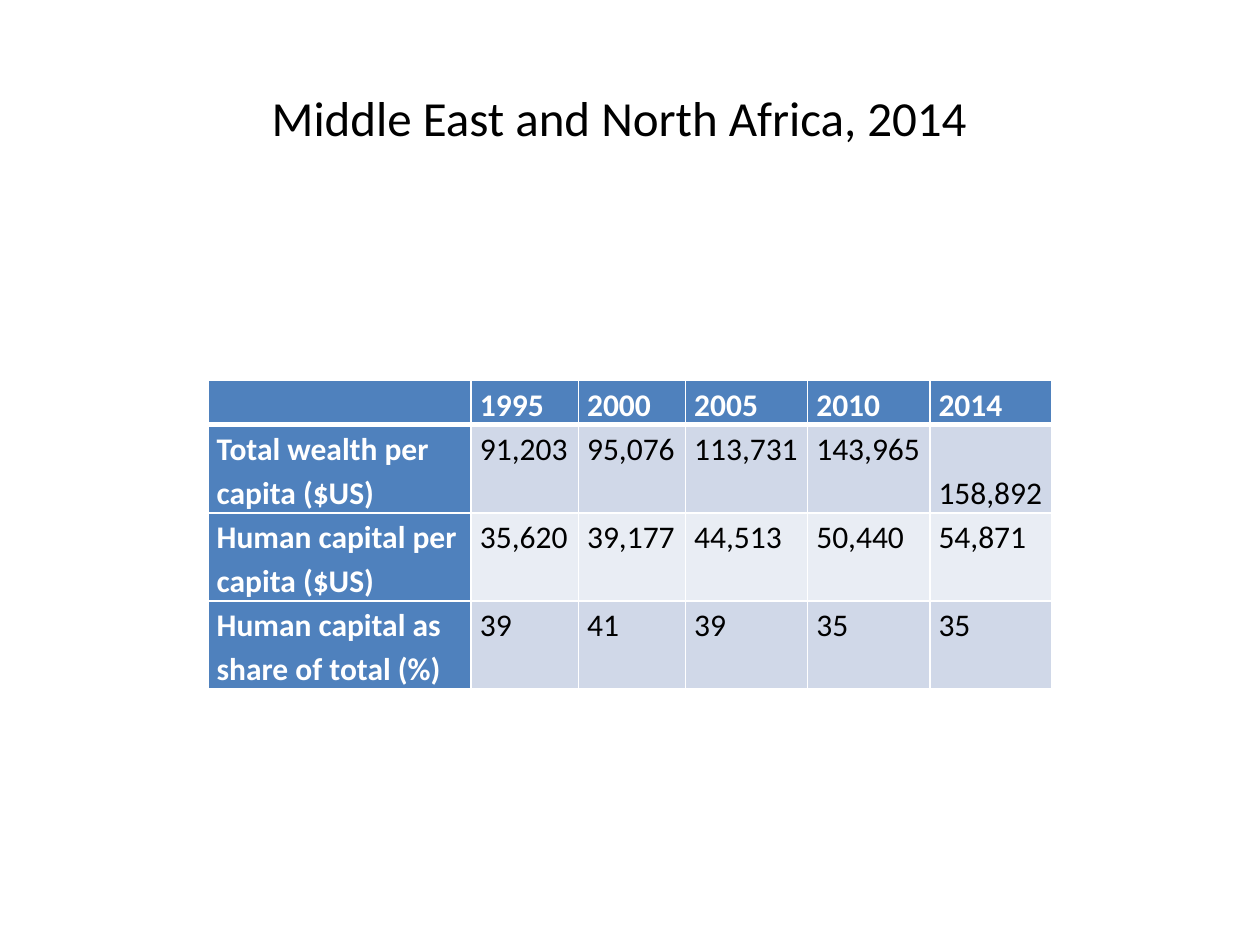
import pptx
import pptx.util
import pptx.dml.color
import pptx.enum.text
import pptx.oxml.ns
import lxml.etree

TITLE = "Middle East and North Africa, 2014"
ROWS = [
    ("", "1995", "2000", "2005", "2010", "2014"),
    ("Total wealth per capita ($US)",
     "91,203", "95,076", "113,731", "143,965", " 158,892"),
    ("Human capital per capita ($US)",
     "35,620", "39,177", "44,513", "50,440", "54,871"),
    ("Human capital as share of total (%)", "39", "41", "39", "35", "35"),
]
COLUMN_WIDTHS = [2.09, 0.85, 0.85, 0.97, 0.97, 0.97]
LINE_HEIGHT = 0.35
ROW_LINES = [1, 2, 2, 2]
HEADING_FILL = "4F81BD"
BAND_FILLS = ["E9EDF4", "D0D8E8"]
WHITE, BLACK = "FFFFFF", "000000"

inch = pptx.util.Inches


def color(code):
    return pptx.dml.color.RGBColor.from_string(code)


def set_format(target, values):
    for name, value in values.items():
        setattr(target, name, value)


def write(para, text, size, code, bold=False):
    span = para.add_run()
    span.text = text
    set_format(span.font, {"name": "Calibri", "size": pptx.util.Pt(size), "bold": bold})
    span.font.color.rgb = color(code)


def add_borders(cell, widths):
    """Draw white cell borders; widths maps L, R, T and B to points."""
    properties = cell._tc.get_or_add_tcPr()
    for side, width in widths.items():
        line = lxml.etree.SubElement(properties, pptx.oxml.ns.qn(f"a:ln{side}"),
                                     w=str(pptx.util.Pt(width)))
        fill = lxml.etree.SubElement(line, pptx.oxml.ns.qn("a:solidFill"))
        lxml.etree.SubElement(fill, pptx.oxml.ns.qn("a:srgbClr"), val=WHITE)


def add_title(page):
    box = page.shapes.add_textbox(inch(0.5), inch(0.3), inch(9), inch(1.25))
    set_format(box.text_frame, {
        "word_wrap": True,
        "vertical_anchor": pptx.enum.text.MSO_ANCHOR.MIDDLE,
        "margin_right": inch(0.27),
    })
    para = box.text_frame.paragraphs[0]
    para.alignment = pptx.enum.text.PP_ALIGN.CENTER
    write(para, TITLE, 28, BLACK)


def add_wealth_table(page):
    table = page.shapes.add_table(
        len(ROWS), len(COLUMN_WIDTHS), inch(1.65), inch(3.02),
        inch(sum(COLUMN_WIDTHS)), inch(LINE_HEIGHT * sum(ROW_LINES))).table
    for column, width in zip(table.columns, COLUMN_WIDTHS):
        column.width = inch(width)
    for row, lines in zip(table.rows, ROW_LINES):
        row.height = inch(LINE_HEIGHT * lines)

    for r, values in enumerate(ROWS):
        for c, value in enumerate(values):
            cell = table.cell(r, c)
            heading = r == 0 or c == 0
            set_format(cell, {"margin_left": inch(0.07), "margin_right": inch(0.07),
                              "margin_top": 0, "margin_bottom": 0})
            add_borders(cell, {"L": 1, "R": 1, "T": 3 if r == 1 else 1,
                               "B": 3 if r == 0 else 1})
            cell.fill.solid()
            cell.fill.fore_color.rgb = color(HEADING_FILL if heading else BAND_FILLS[r % 2])
            para = cell.text_frame.paragraphs[0]
            para.line_spacing = 1.15
            if value:
                write(para, value, 18, WHITE if heading else BLACK, heading)


def main():
    deck = pptx.Presentation()
    set_format(deck, {"slide_width": inch(10), "slide_height": inch(7.5)})
    page = deck.slides.add_slide(deck.slide_layouts[6])
    add_title(page)
    add_wealth_table(page)
    deck.save("out.pptx")


if __name__ == "__main__":
    main()
